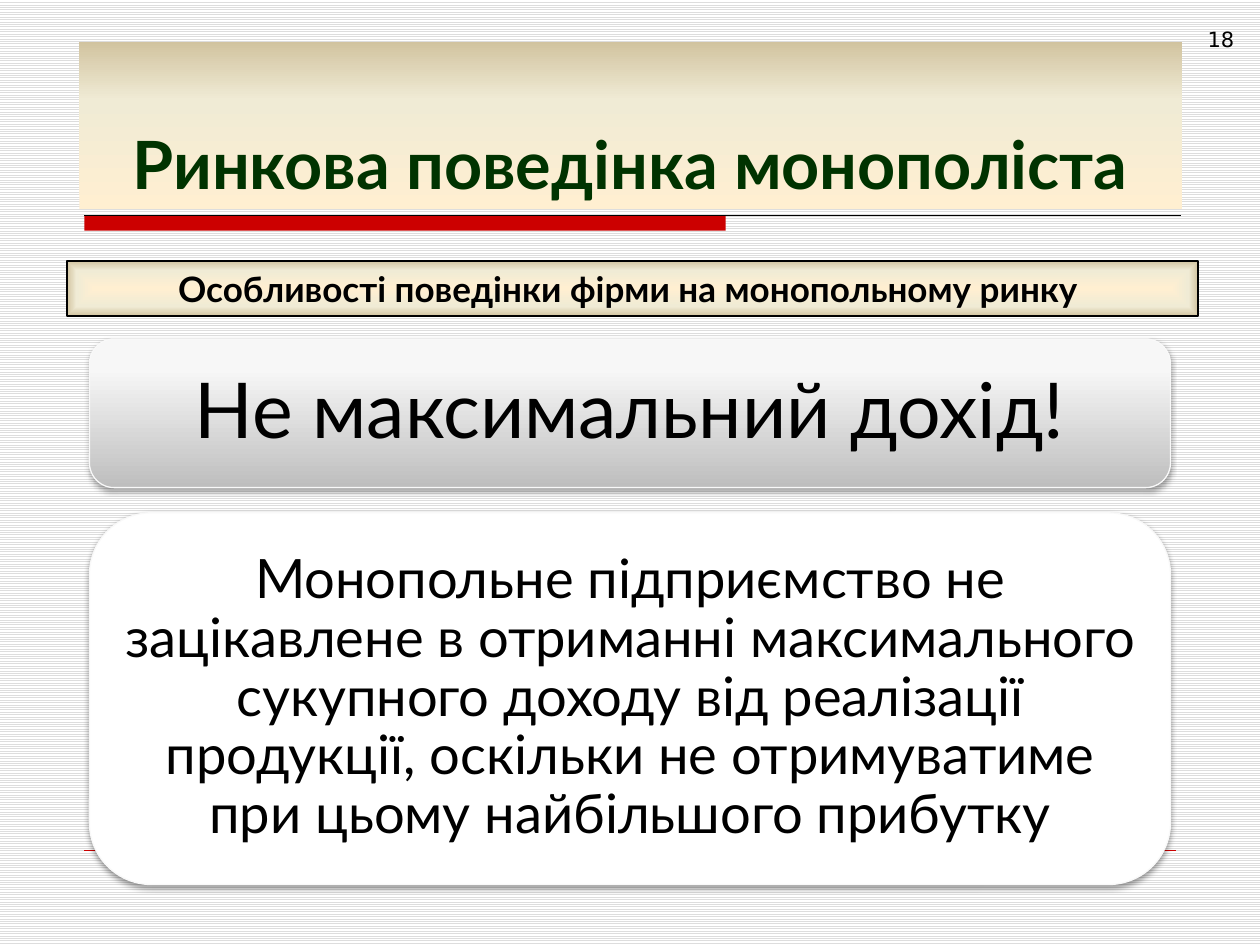
import lxml.etree
import pptx
import pptx.dml.color
import pptx.enum.dml
import pptx.enum.shapes
import pptx.enum.text
import pptx.oxml
import pptx.oxml.ns
import pptx.util

Inches = pptx.util.Inches
Pt = pptx.util.Pt
SHAPES = pptx.enum.shapes.MSO_SHAPE
ANCHORS = pptx.enum.text.MSO_ANCHOR

COLORS = {
    "black": "000000", "white": "FFFFFF", "stripe": "DDDDDD", "red": "CC0000",
    "green": "003300", "rim": "F9F9F9",
}
SAND = [(0, "FFEFD1"), (65, "F0EBD5"), (100, "D1C39F")]
SILVER = [(0, "BEBEBE"), (80, "F7F7F7"), (100, "F8F8F8")]
UPWARD = '<a:lin ang="16200000" scaled="0"/>'
INWARD = '<a:path path="rect"><a:fillToRect l="50000" t="50000" r="50000" b="50000"/></a:path>'


class SlideMaker:
    """Holds the style and the page, and adds each kind of element."""

    def __init__(self, page, font):
        self.page = page
        self.font = font

    def color(self, name):
        return pptx.dml.color.RGBColor.from_string(COLORS[name])

    def background(self, fore, back):
        fill = self.page.background.fill
        fill.patterned()
        fill.pattern = pptx.enum.dml.MSO_PATTERN.LIGHT_HORIZONTAL
        fill.fore_color.rgb = self.color(fore)
        fill.back_color.rgb = self.color(back)

    def shape(self, kind, left, top, width, height, fill, line=None, weight=0.75):
        box = self.page.shapes.add_shape(
            kind, Inches(left), Inches(top), Inches(width), Inches(height))
        box.shadow.inherit = False
        box.fill.solid()
        box.fill.fore_color.rgb = self.color(fill)
        if line:
            box.line.color.rgb = self.color(line)
            box.line.width = Pt(weight)
        else:
            box.line.fill.background()
        return box

    def gradient(self, box, stops, direction):
        marks = "".join(
            f'<a:gs pos="{place * 1000}"><a:srgbClr val="{shade}"/></a:gs>'
            for place, shade in stops)
        grad = pptx.oxml.parse_xml(
            f'<a:gradFill {pptx.oxml.ns.nsdecls("a")} rotWithShape="1">'
            f'<a:gsLst>{marks}</a:gsLst>{direction}</a:gradFill>')
        props = box.element.spPr
        props.replace(props.find(pptx.oxml.ns.qn("a:solidFill")), grad)

    def shadow(self, box, opacity, distance):
        effects = box.element.spPr.find(pptx.oxml.ns.qn("a:effectLst"))
        effects.append(pptx.oxml.parse_xml(
            f'<a:outerShdw {pptx.oxml.ns.nsdecls("a")} blurRad="{Pt(3.1)}" '
            f'dist="{Pt(distance)}" dir="5400000" rotWithShape="0">'
            f'<a:srgbClr val="{COLORS["black"]}"><a:alpha val="{opacity * 1000}"/>'
            '</a:srgbClr></a:outerShdw>'))

    def line(self, left, right, top, color, weight):
        rule = self.page.shapes.add_connector(
            pptx.enum.shapes.MSO_CONNECTOR.STRAIGHT,
            Inches(left), Inches(top), Inches(right), Inches(top))
        rule.line.color.rgb = self.color(color)
        rule.line.width = Pt(weight)
        lxml.etree.SubElement(rule.element.spPr, pptx.oxml.ns.qn("a:effectLst"))

    def text(self, box, words, size, color="black", bold=False,
             anchor=ANCHORS.TOP, inset=None, spacing=None, font=None):
        frame = box.text_frame
        frame.word_wrap = True
        frame.vertical_anchor = anchor
        if inset is not None:
            frame.margin_left = frame.margin_right = Inches(inset)
            frame.margin_top = frame.margin_bottom = Inches(inset)
        para = frame.paragraphs[0]
        para.text = words
        para.alignment = pptx.enum.text.PP_ALIGN.CENTER
        para.line_spacing = spacing
        para.font.name = font or self.font
        para.font.size = Pt(size)
        para.font.bold = bold
        para.font.color.rgb = self.color(color)

    def card(self, top, height, words, size, inset, opacity, distance, stops=None):
        box = self.shape(SHAPES.ROUNDED_RECTANGLE, 0.71, top, 8.58, height, "white", "rim")
        if stops:
            self.gradient(box, stops, UPWARD)
        self.shadow(box, opacity, distance)
        self.text(box, words, size, anchor=ANCHORS.MIDDLE, inset=inset, spacing=0.9)


def main():
    deck = pptx.Presentation()
    deck.slide_width, deck.slide_height = Inches(10), Inches(7.5)
    page = deck.slides.add_slide(deck.slide_layouts[6])
    maker = SlideMaker(page, "Lato")
    maker.background("stripe", "white")

    maker.shape(SHAPES.RECTANGLE, 0.67, 1.71, 5.09, 0.12, "red")
    maker.line(0.67, 9.37, 1.71, "black", 0.75)
    maker.line(0.67, 9.33, 6.75, "red", 0.25)

    number = page.shapes.add_textbox(Inches(9.38), Inches(0.16), Inches(0.62), Inches(0.27))
    maker.text(number, "18", 12, font="DejaVu Sans")

    title = maker.shape(SHAPES.RECTANGLE, 0.63, 0.33, 8.75, 1.33, "white")
    maker.gradient(title, SAND, UPWARD)
    maker.text(title, "Ринкова поведінка монополіста", 38, "green", True, ANCHORS.BOTTOM)

    subtitle = maker.shape(SHAPES.RECTANGLE, 0.53, 2.07, 8.98, 0.44, "white", "black", 1)
    maker.gradient(subtitle, SAND, INWARD)
    maker.text(subtitle, "Особливості поведінки фірми на монопольному ринку ", 20, bold=True)

    maker.card(2.69, 1.18, "Не максимальний дохід!", 44, 0.18, 35, 1.8, SILVER)
    maker.card(
        4.07, 2.95,
        "Монопольне підприємство не зацікавлене в отриманні максимального сукупного "
        "доходу від реалізації продукції, оскільки не отримуватиме при цьому "
        "найбільшого прибутку", 31, 0.13, 38, 1.6)
    deck.save("out.pptx")


if __name__ == "__main__":
    main()
